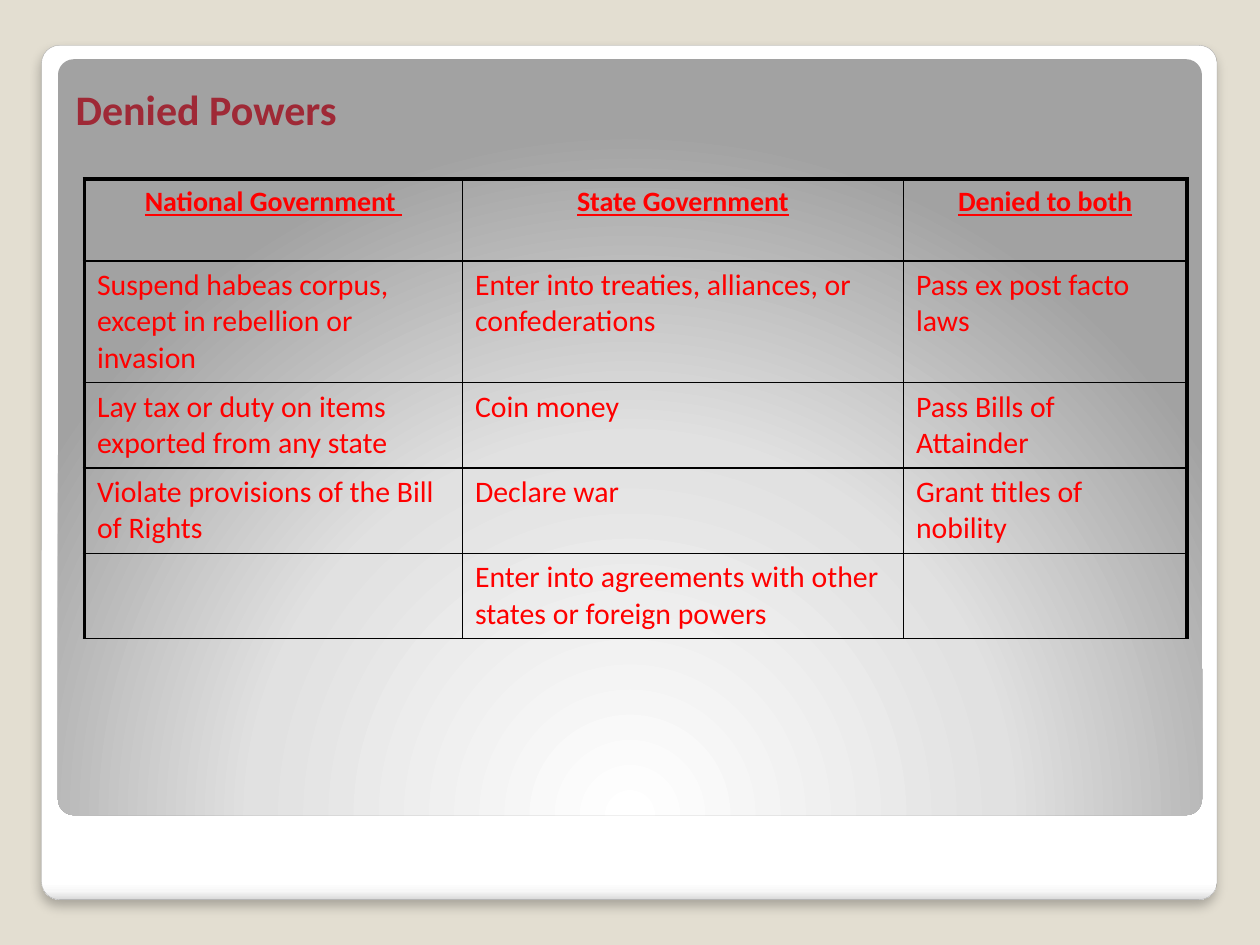
from lxml import etree
from pptx import Presentation
from pptx import util as u
from pptx.dml.color import RGBColor
from pptx.enum import shapes, text
from pptx.oxml import ns

Pt = u.Pt
BEIGE = RGBColor(0xE3, 0xDE, 0xD1)
EDGE_GREY = RGBColor(0xA4, 0xA4, 0xA4)
CRIMSON = RGBColor(0x9F, 0x29, 0x36)
RED = RGBColor(0xFF, 0x00, 0x00)
BLACK = RGBColor(0x00, 0x00, 0x00)
WHITE = RGBColor(0xFF, 0xFF, 0xFF)
SILVER = RGBColor(0xE1, 0xE1, 0xE1)
GREY = RGBColor(0xA2, 0xA2, 0xA2)
MIST = RGBColor(0xF7, 0xF7, 0xF7)
ASH = RGBColor(0xDA, 0xDA, 0xDA)

FONT = "Calibri"
THIN, THICK = 1, 2.25
COLUMN_WIDTHS = [216, 252, 162]
ROW_HEIGHTS = [46.8] + [45.36] * 4
ROWS = [
    ["National Government ", "State Government", "Denied to both"],
    ["Suspend habeas corpus, except in rebellion or invasion",
     "Enter into treaties, alliances, or confederations",
     "Pass ex post facto laws"],
    ["Lay tax or duty on items exported from any state", "Coin money",
     "Pass Bills of Attainder"],
    ["Violate provisions of the Bill of Rights", "Declare war",
     "Grant titles of nobility"],
    ["", "Enter into agreements with other states or foreign powers", ""],
]


def add_element(parent, tag, **attributes):
    values = {name: str(value) for name, value in attributes.items()}
    return etree.SubElement(parent, ns.qn(tag), values)


def add_panel(page, left, top, width, height, stops):
    panel = page.shapes.add_shape(
        shapes.MSO_SHAPE.ROUNDED_RECTANGLE,
        Pt(left), Pt(top), Pt(width), Pt(height))
    panel.adjustments[0] = 0.021
    panel.shadow.inherit = False
    panel.line.fill.background()
    panel.fill.background()
    properties = panel.element.spPr
    gradient = etree.Element(ns.qn("a:gradFill"), rotWithShape="1")
    properties.replace(properties.find(ns.qn("a:noFill")), gradient)
    stop_list = add_element(gradient, "a:gsLst")
    for position, color in stops:
        stop = add_element(stop_list, "a:gs", pos=position * 1000)
        add_element(stop, "a:srgbClr", val=color)
    return panel, gradient


def add_card(page):
    stops = [(0, WHITE), (98, WHITE), (99, MIST), (100, ASH)]
    card, gradient = add_panel(page, 23.76, 25.92, 671.76, 488.16, stops)
    add_element(gradient, "a:lin", ang=90 * 60000, scaled=0)
    card.line.color.rgb = EDGE_GREY
    card.line.width = Pt(0.16)
    effects = card.element.spPr.find(ns.qn("a:effectLst"))
    shadow = add_element(effects, "a:outerShdw", blurRad=Pt(6), dist=Pt(4),
                         dir=90 * 60000, algn="tl", rotWithShape=0)
    color = add_element(shadow, "a:srgbClr", val=BLACK)
    add_element(color, "a:alpha", val=25000)


def add_backdrop(page):
    stops = [(0, WHITE), (55, SILVER), (100, GREY)]
    _, gradient = add_panel(page, 33.12, 33.84, 653.76, 432, stops)
    circle = add_element(gradient, "a:path", path="circle")
    add_element(circle, "a:fillToRect", l=50000, t=175000, r=50000, b=-75000)


def format_span(span, size, color, bold=False, underline=False):
    span.font.name = FONT
    span.font.size = Pt(size)
    span.font.color.rgb = color
    span.font.bold = bold
    span.font.underline = underline


def place_title(page, wording):
    title = page.shapes.title
    page.shapes.element.append(title.element)
    title.left, title.top = Pt(36), Pt(41.76)
    title.width, title.height = Pt(648), Pt(38.16)
    title.text_frame.text = wording
    title.text_frame.vertical_anchor = text.MSO_ANCHOR.BOTTOM
    para = title.text_frame.paragraphs[0]
    para.alignment = text.PP_ALIGN.LEFT
    format_span(para.runs[0], 24, CRIMSON, bold=True)


def set_borders(cell, widths):
    properties = cell._tc.get_or_add_tcPr()
    for index, (side, width) in enumerate(zip("LRTB", widths)):
        border = etree.Element(ns.qn(f"a:ln{side}"), w=str(Pt(width)))
        fill = add_element(border, "a:solidFill")
        add_element(fill, "a:srgbClr", val=BLACK)
        properties.insert(index, border)


def fill_cell(cell, wording, header):
    cell.fill.background()
    cell.text_frame.text = wording
    para = cell.text_frame.paragraphs[0]
    spacing = add_element(para._p.get_or_add_pPr(), "a:spcBef")
    add_element(spacing, "a:spcPct", val=20000)
    para.alignment = text.PP_ALIGN.CENTER if header else text.PP_ALIGN.LEFT
    for span in para.runs:
        format_span(span, 16 if header else 17, RED, header, header)


def add_powers_table(page):
    frame = page.shapes.add_table(
        len(ROWS), len(COLUMN_WIDTHS), Pt(48.24), Pt(102.24),
        Pt(sum(COLUMN_WIDTHS)), Pt(sum(ROW_HEIGHTS)))
    table = frame.table
    table.first_row = table.horz_banding = False
    for column, width in zip(table.columns, COLUMN_WIDTHS):
        column.width = Pt(width)
    for row, height in zip(table.rows, ROW_HEIGHTS):
        row.height = Pt(height)
    last = len(COLUMN_WIDTHS) - 1
    for r, wordings in enumerate(ROWS):
        for c, wording in enumerate(wordings):
            cell = table.cell(r, c)
            fill_cell(cell, wording, header=r == 0)
            set_borders(cell, [THICK if c == 0 else THIN,
                               THICK if c == last else THIN,
                               THICK if r == 0 else THIN,
                               THIN])


def main():
    deck = Presentation()
    deck.slide_width, deck.slide_height = Pt(720), Pt(540)
    page = deck.slides.add_slide(deck.slide_layouts[5])
    page.background.fill.solid()
    page.background.fill.fore_color.rgb = BEIGE
    add_card(page)
    add_backdrop(page)
    place_title(page, "Denied Powers")
    add_powers_table(page)
    deck.save("out.pptx")


if __name__ == "__main__":
    main()
